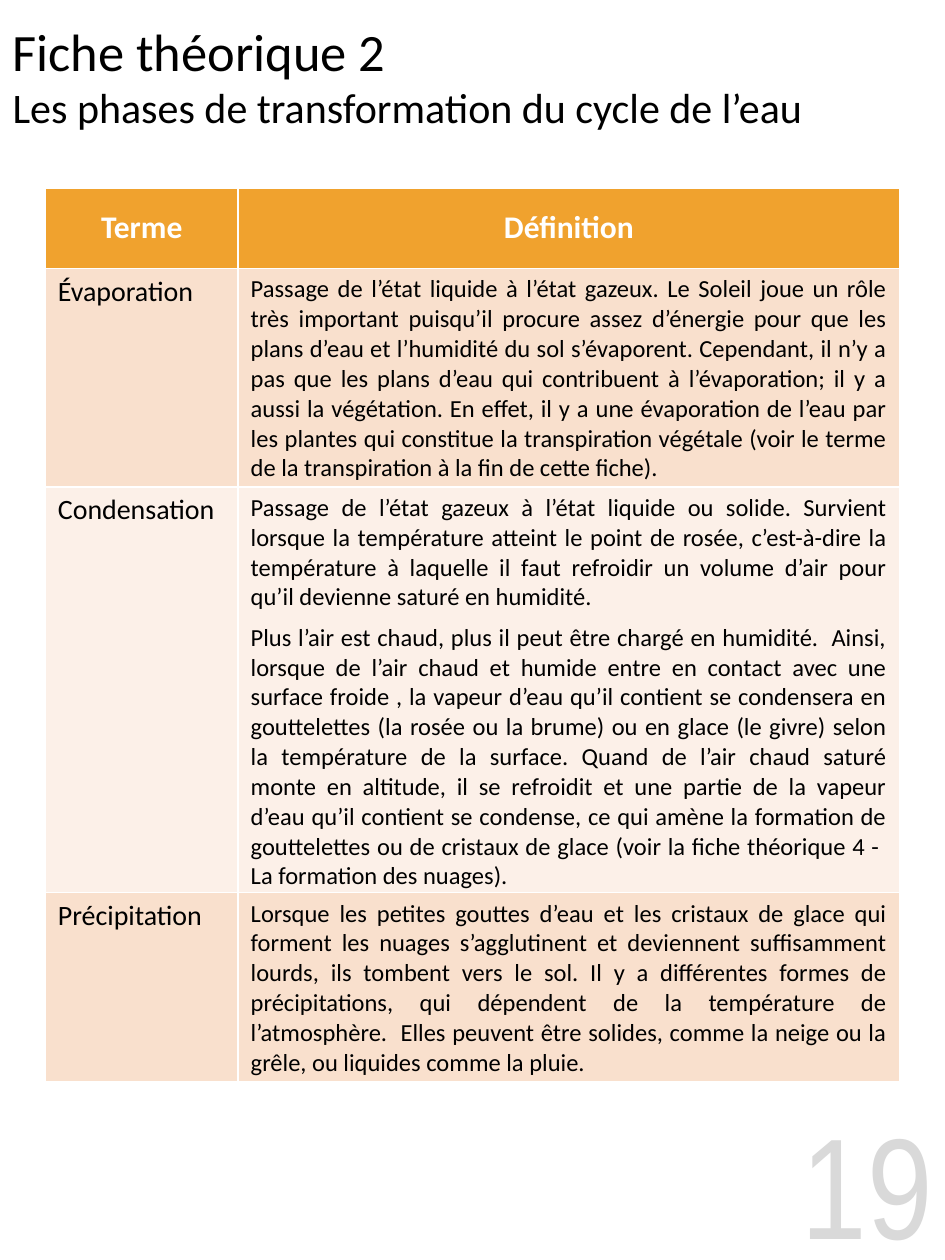
from dataclasses import dataclass

from pptx import Presentation
from pptx.dml.color import RGBColor
from pptx.enum.text import MSO_ANCHOR as Anchor, MSO_AUTO_SIZE as AutoSize, PP_ALIGN as Align
from pptx.util import Inches, Pt


@dataclass(frozen=True)
class Theme:
    body_font: str = "Calibri"
    number_font: str = "Arial Narrow"
    text: str = "000000"
    header_text: str = "FFFFFF"
    header_fill: str = "F0A22E"
    bands: tuple = ("F9E0CD", "FCF0E8")
    page_number: str = "D9D9D9"
    title_size: int = 30
    subtitle_size: int = 24
    header_size: int = 18
    term_size: int = 16
    definition_size: int = 14
    number_size: int = 82
    paragraph_gap: int = 6


THEME = Theme()
PAGE_WIDTH, PAGE_HEIGHT = Inches(7.5), Inches(10)
TITLE_ONLY = 5
COLUMN_WIDTHS = (1.53, 5.25)
ROW_HEIGHTS = (0.64, 1.55, 2.77, 1.5)

HEADINGS = ("Terme", "Définition")
GLOSSARY = (
    ("Évaporation", (
        "Passage de l’état liquide à l’état gazeux. Le Soleil joue un rôle très important "
        "puisqu’il procure assez d’énergie pour que les plans d’eau et l’humidité du sol "
        "s’évaporent. Cependant, il n’y a pas que les plans d’eau qui contribuent à "
        "l’évaporation; il y a aussi la végétation. En effet, il y a une évaporation de l’eau "
        "par les plantes qui constitue la transpiration végétale (voir le terme de la "
        "transpiration à la fin de cette fiche).",
    )),
    ("Condensation", (
        "Passage de l’état gazeux à l’état liquide ou solide. Survient lorsque la température "
        "atteint le point de rosée, c’est-à-dire la température à laquelle il faut refroidir "
        "un volume d’air pour qu’il devienne saturé en humidité.",
        "Plus l’air est chaud, plus il peut être chargé en humidité.  Ainsi, lorsque de l’air "
        "chaud et humide entre en contact avec une surface froide , la vapeur d’eau qu’il "
        "contient se condensera en gouttelettes (la rosée ou la brume) ou en glace (le givre) "
        "selon la température de la surface. Quand de l’air chaud saturé monte en altitude, il "
        "se refroidit et une partie de la vapeur d’eau qu’il contient se condense, ce qui amène "
        "la formation de gouttelettes ou de cristaux de glace (voir la fiche théorique 4 - "
        " La formation des nuages).",
    )),
    ("Précipitation", (
        "Lorsque les petites gouttes d’eau et les cristaux de glace qui forment les nuages "
        "s’agglutinent et deviennent suffisamment lourds, ils tombent vers le sol. Il y a "
        "différentes formes de précipitations, qui dépendent de la température de "
        "l’atmosphère.  Elles peuvent être solides, comme la neige ou la grêle, ou liquides "
        "comme la pluie.",
    )),
)


def style(paragraph, size, color=THEME.text, font=THEME.body_font, align=Align.LEFT, bold=False):
    paragraph.alignment = align
    paragraph.font.size = Pt(size)
    paragraph.font.name = font
    paragraph.font.bold = bold
    paragraph.font.color.rgb = RGBColor.from_string(color)


def fill_cell(cell, paragraphs, fill, size, anchor=Anchor.TOP, **look):
    cell.fill.solid()
    cell.fill.fore_color.rgb = RGBColor.from_string(fill)
    cell.vertical_anchor = anchor
    cell.text_frame.text = "\n".join(paragraphs)
    for index, paragraph in enumerate(cell.text_frame.paragraphs):
        if index:
            paragraph.space_before = Pt(THEME.paragraph_gap)
        style(paragraph, size, **look)


def add_heading(slide, title, subtitle):
    heading = slide.shapes.title
    heading.left, heading.top = 0, 0
    heading.width, heading.height = PAGE_WIDTH, int(PAGE_HEIGHT * 0.12)
    frame = heading.text_frame
    frame.text = f"{title}\n{subtitle}"
    frame.auto_size = AutoSize.NONE
    frame.vertical_anchor = Anchor.MIDDLE
    for paragraph, size in zip(frame.paragraphs, (THEME.title_size, THEME.subtitle_size)):
        style(paragraph, size)


def add_glossary(slide):
    table = slide.shapes.add_table(
        len(ROW_HEIGHTS), len(COLUMN_WIDTHS), Inches(0.36), Inches(1.49),
        Inches(sum(COLUMN_WIDTHS)), Inches(sum(ROW_HEIGHTS))).table
    for column, width in zip(table.columns, COLUMN_WIDTHS):
        column.width = Inches(width)
    for row, height in zip(table.rows, ROW_HEIGHTS):
        row.height = Inches(height)
    for column, heading in enumerate(HEADINGS):
        fill_cell(table.cell(0, column), [heading], THEME.header_fill, THEME.header_size,
                  Anchor.MIDDLE, color=THEME.header_text, align=Align.CENTER, bold=True)
    for index, (term, definition) in enumerate(GLOSSARY):
        band = THEME.bands[index % len(THEME.bands)]
        fill_cell(table.cell(index + 1, 0), [term], band, THEME.term_size)
        fill_cell(table.cell(index + 1, 1), definition, band, THEME.definition_size,
                  align=Align.JUSTIFY)


def add_page_number(slide, number):
    """Set the number in the bottom right corner of the page."""
    width, height = Inches(1.71), Inches(1.24)
    frame = slide.shapes.add_textbox(
        PAGE_WIDTH - width, PAGE_HEIGHT - height, width, height).text_frame
    frame.word_wrap = True
    frame.vertical_anchor = Anchor.MIDDLE
    frame.text = str(number)
    style(frame.paragraphs[0], THEME.number_size, THEME.page_number, THEME.number_font, Align.RIGHT)


def main():
    deck = Presentation()
    deck.slide_width, deck.slide_height = PAGE_WIDTH, PAGE_HEIGHT
    slide = deck.slides.add_slide(deck.slide_layouts[TITLE_ONLY])
    add_page_number(slide, 19)
    add_glossary(slide)
    add_heading(slide, "Fiche théorique 2", "Les phases de transformation du cycle de l’eau")
    deck.save("out.pptx")


if __name__ == "__main__":
    main()
